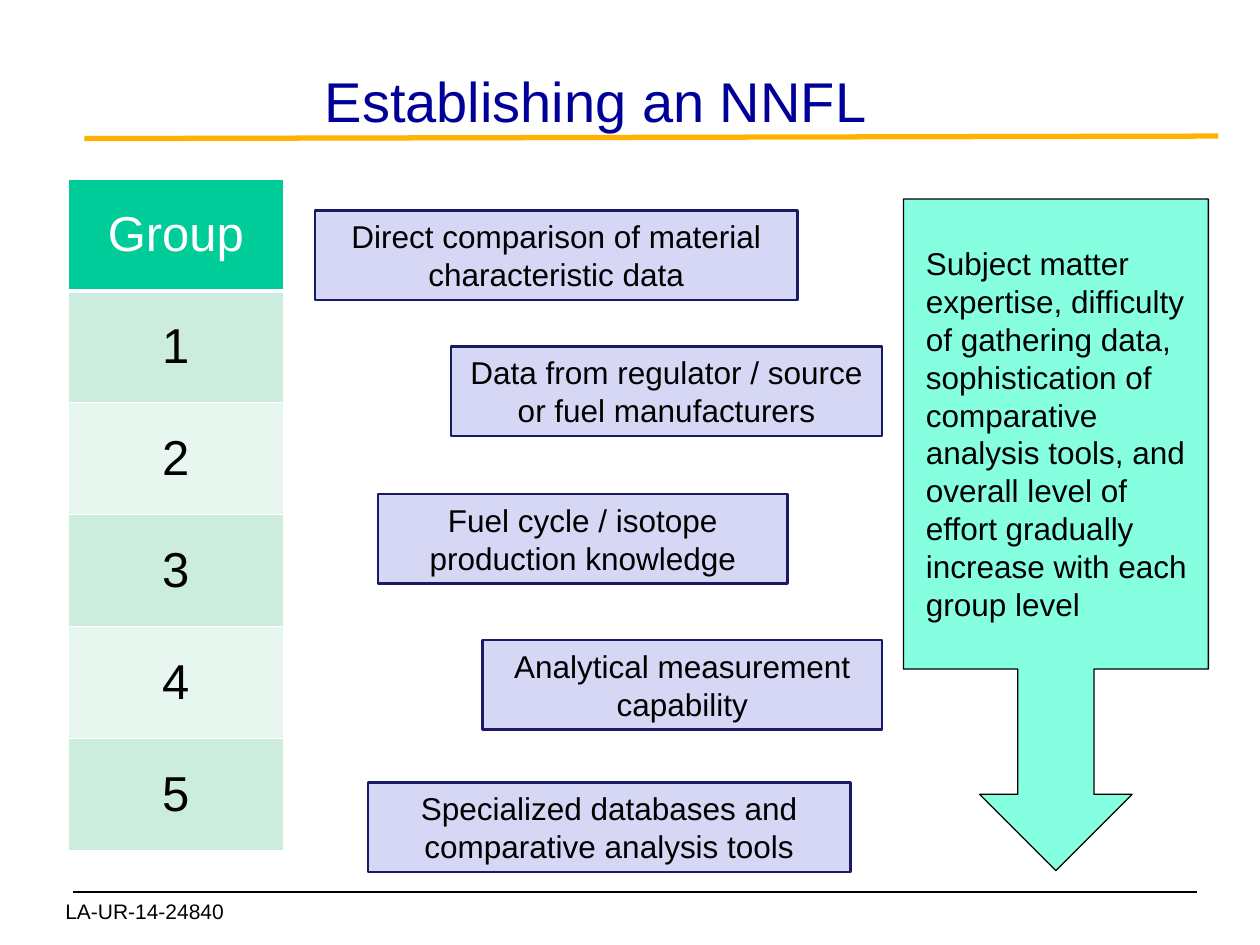
from dataclasses import dataclass

from lxml.etree import SubElement
from pptx import Presentation
from pptx.dml.color import RGBColor
from pptx.enum.shapes import MSO_CONNECTOR, MSO_SHAPE
from pptx.enum.text import MSO_ANCHOR, MSO_AUTO_SIZE, PP_ALIGN
from pptx.oxml import parse_xml
from pptx.oxml.ns import nsdecls, qn
from pptx.util import Inches, Pt


@dataclass(frozen=True)
class Theme:
    font: str = "Arial"
    title: str = "000099"
    text: str = "000000"
    white: str = "FFFFFF"
    rule: str = "FFB300"
    header: str = "00CC99"
    band_dark: str = "CCECDE"
    band_light: str = "E7F6EF"
    box_fill: str = "D6D6F5"
    box_line: str = "191966"
    callout: str = "85FFE0"
    title_size: int = 32
    table_size: int = 28
    body_size: int = 18
    footer_size: int = 12


theme = Theme()


def write_text(frame, text, size, color=theme.text, alignment=PP_ALIGN.CENTER,
               anchor=MSO_ANCHOR.MIDDLE, auto_size=MSO_AUTO_SIZE.NONE):
    frame_format = {"word_wrap": True, "auto_size": auto_size, "vertical_anchor": anchor}
    for name, value in frame_format.items():
        setattr(frame, name, value)
    paragraph = frame.paragraphs[0]
    paragraph.text = text
    paragraph.alignment = alignment
    for name, value in {"name": theme.font, "size": Pt(size)}.items():
        setattr(paragraph.font, name, value)
    paragraph.font.color.rgb = RGBColor.from_string(color)


def paint(shape, fill, line, width):
    shape.shadow.inherit = False
    shape.fill.solid()
    shape.fill.fore_color.rgb = RGBColor.from_string(fill)
    shape.line.color.rgb = RGBColor.from_string(line)
    shape.line.width = Pt(width)


presentation = Presentation()
presentation.slide_width = Inches(10)
presentation.slide_height = Inches(7.5)
slide = presentation.slides.add_slide(presentation.slide_layouts[5])

title = slide.shapes.title
title_place = {"left": 0.54, "top": 0.42, "width": 8.38, "height": 0.75}
for name, value in title_place.items():
    setattr(title, name, Inches(value))
write_text(title.text_frame, "Establishing an NNFL", theme.title_size, theme.title)

rules = [
    ((0.58, 7.08, 9.5, 7.08), theme.text, 0.75),
    ((0.67, 1.1, 9.67, 1.08), theme.rule, 3),
]
for ends, color, width in rules:
    rule = slide.shapes.add_connector(MSO_CONNECTOR.STRAIGHT, *map(Inches, ends))
    rule.line.color.rgb = RGBColor.from_string(color)
    rule.line.width = Pt(width)
    SubElement(rule._element.spPr, qn("a:effectLst"))

groups = ["Group", "1", "2", "3", "4", "5"]
table = slide.shapes.add_table(
    len(groups), 1, Inches(0.54), Inches(1.42), Inches(1.71), Inches(5.33)
).table
for index, group in enumerate(groups):
    cell = table.cell(index, 0)
    band = theme.band_dark if index % 2 else theme.band_light
    cell.fill.solid()
    cell.fill.fore_color.rgb = RGBColor.from_string(band if index else theme.header)
    cell.vertical_anchor = MSO_ANCHOR.MIDDLE
    paragraph = cell.text_frame.paragraphs[0]
    paragraph.text = group
    paragraph.alignment = PP_ALIGN.CENTER
    font_format = {"name": theme.font, "size": Pt(theme.table_size), "bold": False}
    for name, value in font_format.items():
        setattr(paragraph.font, name, value)
    paragraph.font.color.rgb = RGBColor.from_string(theme.text if index else theme.white)
    for position, side in enumerate("LRTB"):
        width = Pt(3 if side == "B" and index == 0 else 1)
        border = parse_xml(
            f'<a:ln{side} {nsdecls("a")} w="{width}"><a:solidFill>'
            f'<a:srgbClr val="{theme.white}"/></a:solidFill></a:ln{side}>'
        )
        cell._tc.get_or_add_tcPr().insert(position, border)

tools = [
    (2.5, 1.67, 3.83, "Direct comparison of material characteristic data"),
    (3.58, 2.75, 3.42, "Data from regulator / source or fuel manufacturers"),
    (3, 3.92, 3.25, "Fuel cycle / isotope production knowledge"),
    (3.83, 5.08, 3.17, "Analytical measurement capability"),
    (2.92, 6.21, 3.83, "Specialized databases and comparative analysis tools"),
]
for left, top, width, text in tools:
    box = slide.shapes.add_shape(
        MSO_SHAPE.RECTANGLE, Inches(left), Inches(top), Inches(width), Inches(0.71)
    )
    paint(box, theme.box_fill, theme.box_line, 1.5)
    write_text(box.text_frame, text, theme.body_size, auto_size=MSO_AUTO_SIZE.SHAPE_TO_FIT_TEXT)

callout = slide.shapes.add_shape(
    MSO_SHAPE.DOWN_ARROW_CALLOUT, Inches(7.17), Inches(1.58), Inches(2.42), Inches(5.33)
)
paint(callout, theme.callout, theme.text, 0.75)
for index, value in enumerate([0.25, 0.25, 0.25, 0.7]):
    callout.adjustments[index] = value

notes = [
    ((7.25, 1.89, 2.33, 3.13), theme.body_size,
     "Subject matter expertise, difficulty of gathering data, sophistication of "
     "comparative analysis tools, and overall level of effort gradually increase "
     "with each group level"),
    ((0.42, 7.08, 2, 0.3), theme.footer_size, "LA-UR-14-24840"),
]
for place, size, text in notes:
    text_box = slide.shapes.add_textbox(*map(Inches, place))
    write_text(text_box.text_frame, text, size, alignment=PP_ALIGN.LEFT,
               anchor=MSO_ANCHOR.TOP, auto_size=MSO_AUTO_SIZE.SHAPE_TO_FIT_TEXT)

presentation.save("out.pptx")
